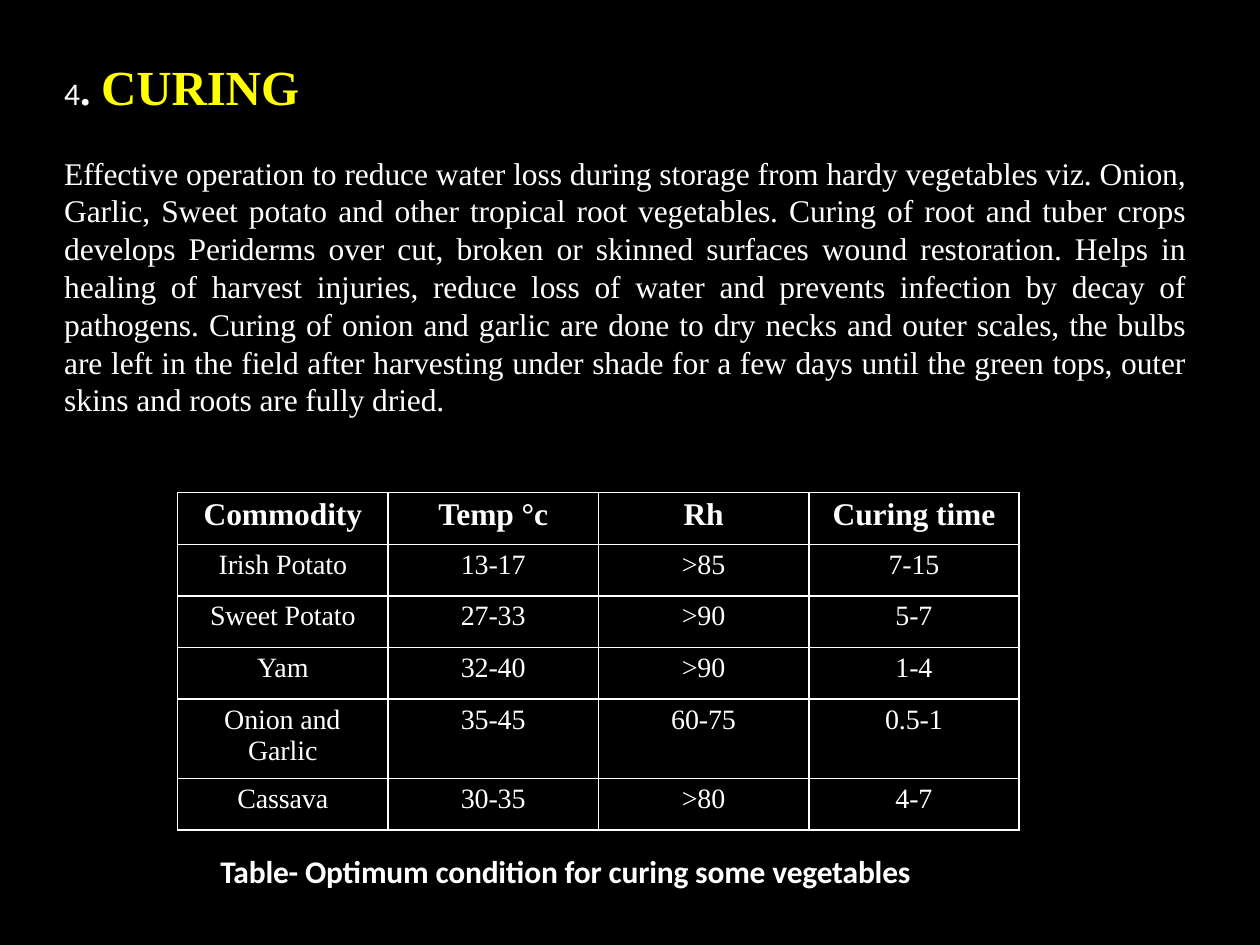
from pptx import Presentation
from pptx.dml.color import RGBColor
from pptx.enum.text import PP_ALIGN
from pptx.oxml import parse_xml
from pptx.oxml.ns import nsdecls
from pptx.util import Inches, Pt

LEFT, CENTER, JUSTIFY = PP_ALIGN.LEFT, PP_ALIGN.CENTER, PP_ALIGN.JUSTIFY

THEME = {
    "serif": "Times New Roman", "sans": "Calibri",
    "back": "000000", "text": "FFFFFF", "accent": "FFFF00",
    "title": 28, "dot": 24, "body": 18, "cell": 16,
}

TITLE = [
    ("4", {"font": THEME["sans"], "size": THEME["body"]}),
    (". ", {"size": THEME["dot"], "bold": True}),
    ("CURING", {"size": THEME["title"], "bold": True, "color": THEME["accent"]}),
]
BODY = (
    "Effective operation to reduce water loss during storage from hardy vegetables viz. "
    "Onion, Garlic, Sweet potato and other tropical root vegetables. Curing of root and tuber "
    "crops develops Periderms over cut, broken or skinned surfaces wound restoration. Helps "
    "in healing of harvest injuries, reduce loss of water and prevents infection by decay of "
    "pathogens. Curing of onion and garlic are done to dry necks and outer scales, the bulbs "
    "are left in the field after harvesting under shade for a few days until the green tops, outer "
    "skins and roots are fully dried."
)
CAPTION = "Table- Optimum condition for curing some vegetables"
CURING_ROWS = [
    ("Commodity", "Temp °c", "Rh", "Curing time"),
    ("Irish Potato", "13-17", ">85", "7-15"),
    ("Sweet Potato", "27-33", ">90", "5-7"),
    ("Yam", "32-40", ">90", "1-4"),
    ("Onion and Garlic", "35-45", "60-75", "0.5-1"),
    ("Cassava", "30-35", ">80", "4-7"),
]
HANGING = {"Onion and Garlic": (0.56, -0.19)}  # left margin, first-line indent
COLUMN_WIDTH, ROW_HEIGHT, TWO_LINE_HEIGHT = 1.67, 0.41, 0.63


def write(frame, spans, align=LEFT, before=1, indent=(0, 0), **common):
    """Fill the first paragraph; each span is a text and its own format."""
    para = frame.paragraphs[0]
    para.alignment = align
    para.space_before = Pt(before)
    properties = para._p.get_or_add_pPr()
    properties.set("marL", str(Inches(indent[0])))
    properties.set("indent", str(Inches(indent[1])))
    for text, own in spans:
        style = {"font": THEME["serif"], "size": THEME["body"], "bold": False,
                 "color": THEME["text"], "spacing": -0.05, **common, **own}
        span = para.add_run()
        span.text = text
        span.font.name = style["font"]
        span.font.size = Pt(style["size"])
        span.font.bold = style["bold"]
        span.font.color.rgb = RGBColor.from_string(style["color"])
        span.font._element.set("spc", str(round(style["spacing"] * 100)))


def add_text(page, place, spans, **style):
    frame = page.shapes.add_textbox(*map(Inches, place)).text_frame
    frame.word_wrap = True
    frame.margin_left = frame.margin_right = frame.margin_bottom = 0
    frame.margin_top = Inches(0.01)
    write(frame, spans, indent=(0.01, 0), **style)


def add_borders(cell):
    properties = cell._tc.get_or_add_tcPr()
    for position, side in enumerate(("lnL", "lnR", "lnT", "lnB")):
        properties.insert(position, parse_xml(
            f'<a:{side} {nsdecls("a")} w="{Pt(1)}"><a:solidFill>'
            f'<a:srgbClr val="{THEME["text"]}"/></a:solidFill></a:{side}>'))


def add_curing_table(page, left, top):
    row_count, column_count = len(CURING_ROWS), len(CURING_ROWS[0])
    heights = [TWO_LINE_HEIGHT if row[0] in HANGING else ROW_HEIGHT for row in CURING_ROWS]
    table = page.shapes.add_table(
        row_count, column_count, Inches(left), Inches(top),
        Inches(COLUMN_WIDTH * column_count), Inches(sum(heights))).table
    for column in table.columns:
        column.width = Inches(COLUMN_WIDTH)
    for r, values in enumerate(CURING_ROWS):
        table.rows[r].height = Inches(heights[r])
        for c, value in enumerate(values):
            cell = table.cell(r, c)
            cell.margin_left = cell.margin_right = cell.margin_bottom = 0
            cell.margin_top = Inches(0.04)
            cell.fill.solid()
            cell.fill.fore_color.rgb = RGBColor.from_string(THEME["back"])
            add_borders(cell)
            write(cell.text_frame, [(value, {})],
                  align=LEFT if value in HANGING else CENTER,
                  indent=HANGING.get(value, (0, 0)), before=3,
                  size=THEME["body"] if r == 0 else THEME["cell"], bold=r == 0)


def main():
    deck = Presentation()
    deck.slide_width, deck.slide_height = Inches(10), Inches(7.5)
    page = deck.slides.add_slide(deck.slide_layouts[6])
    page.background.fill.solid()
    page.background.fill.fore_color.rgb = RGBColor.from_string(THEME["back"])

    add_text(page, (0.5, 0.44, 1.9, 0.49), TITLE)
    add_text(page, (0.5, 1.21, 8.91, 2.13), [(BODY, {})], align=JUSTIFY)
    add_curing_table(page, 1.41, 3.91)
    add_text(page, (1.74, 6.75, 5.57, 0.33), [(CAPTION, {})],
             font=THEME["sans"], bold=True, spacing=-0.1)
    deck.save("out.pptx")


if __name__ == "__main__":
    main()
